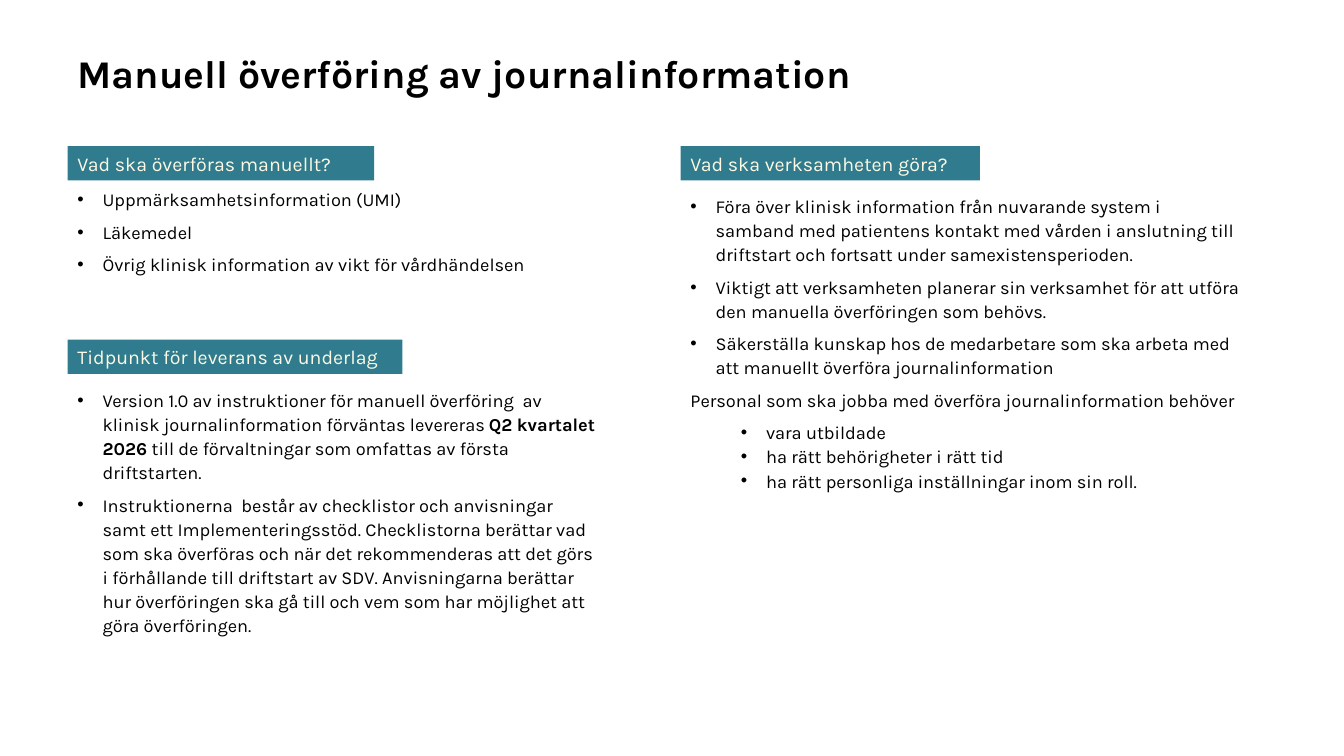
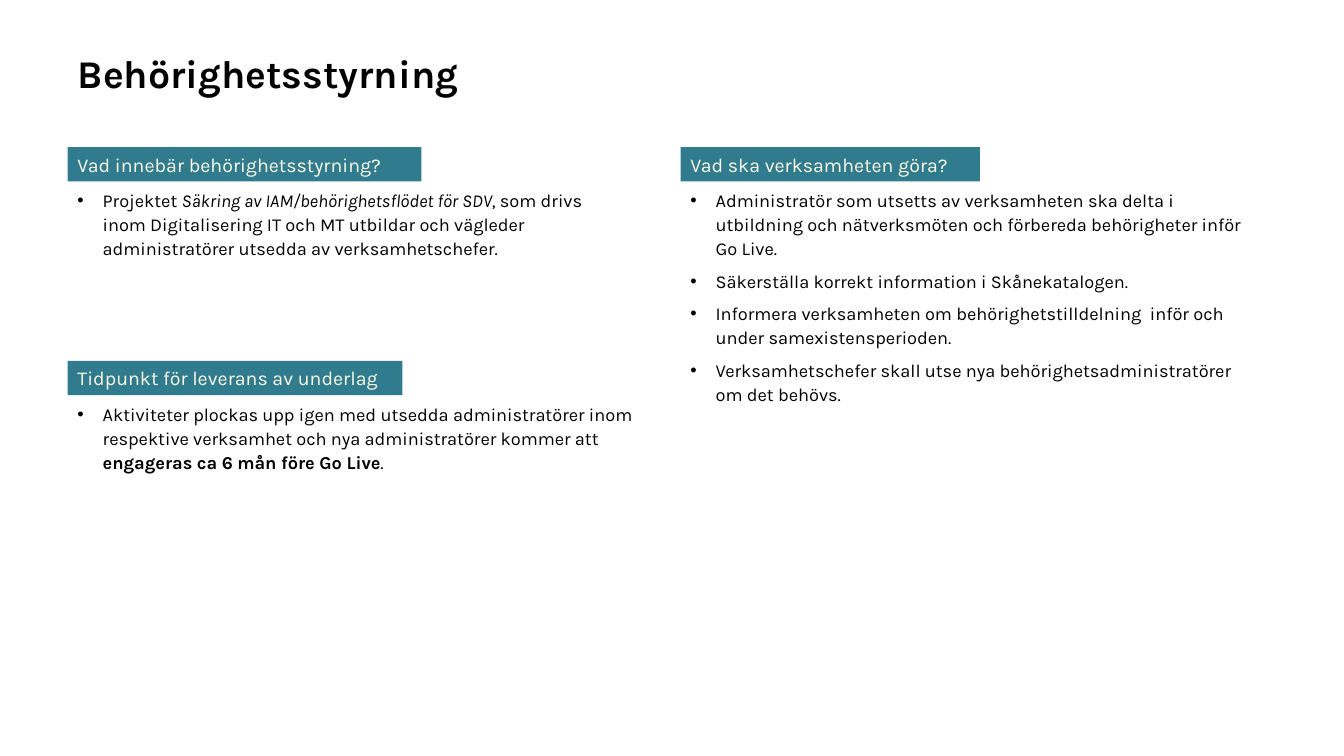
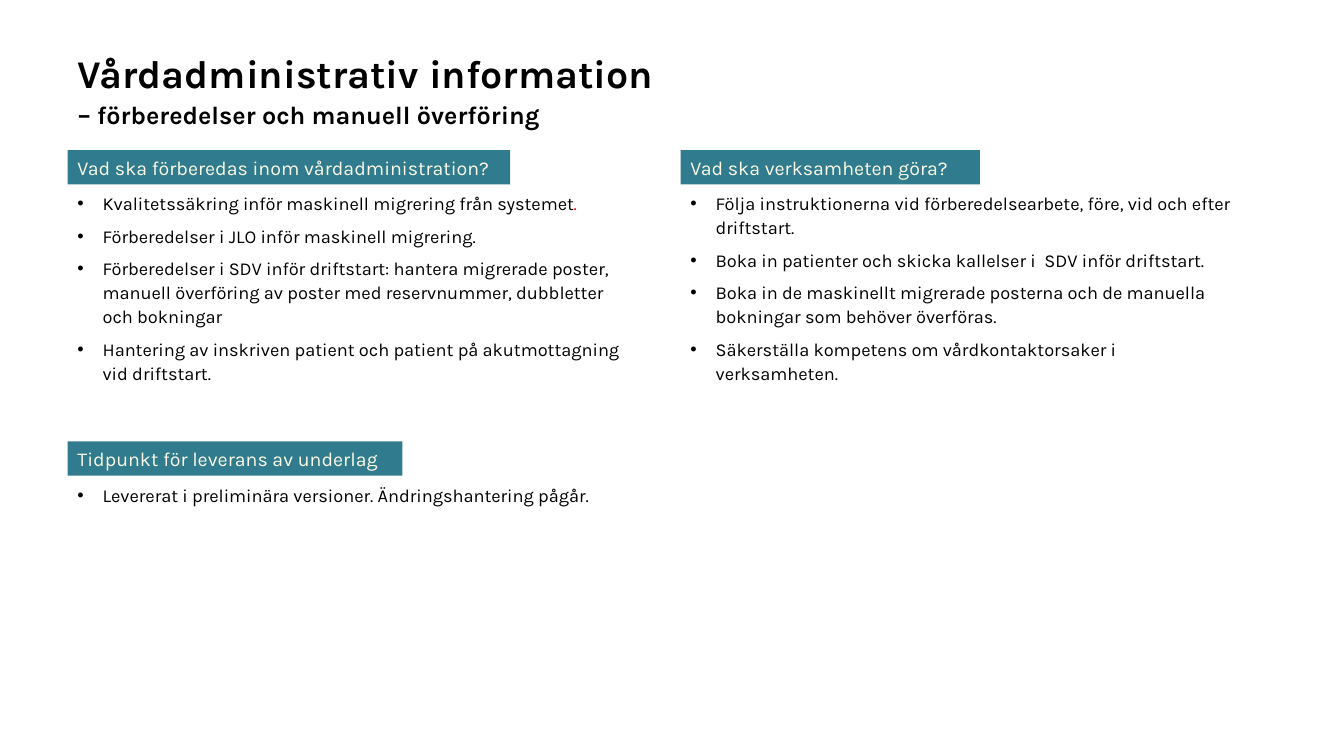
from collections import namedtuple

from lxml import etree
from pptx import Presentation
from pptx.dml.color import RGBColor
from pptx.enum.shapes import MSO_SHAPE
from pptx.enum.text import MSO_ANCHOR, MSO_AUTO_SIZE, PP_ALIGN
from pptx.oxml.ns import qn
from pptx.util import Inches, Pt

RECT = MSO_SHAPE.RECTANGLE
TOP, MIDDLE = MSO_ANCHOR.TOP, MSO_ANCHOR.MIDDLE
NO_FIT = MSO_AUTO_SIZE.NONE
LEFT = PP_ALIGN.LEFT

FONT = "Karla"
BLACK, RED, TEAL, CREAM = "000000", "FF0000", "307C8E", "FDF9E4"
TITLE_SIZE, SUBTITLE_SIZE, HEADING_SIZE, BODY_SIZE = 28, 18, 14, 13
LINE_SPACING = 1.1
HANGING = 0.25
LEFT_X, RIGHT_X = 0.67, 6.75
HEADING_H = 0.34
BODY_GAP = 0.35
WIDE_GAP = 0.42

Run = namedtuple("Run", "text bold italic color", defaults=(False, False, BLACK))
Para = namedtuple("Para", "runs indent after", defaults=(HANGING, 6))
Heading = namedtuple("Heading", "text width")

TASKS = Heading("Vad ska verksamheten göra?", 2.97)
DELIVERY = Heading("Tidpunkt för leverans av underlag", 3.32)


def rgb(hex_color):
    return RGBColor.from_string(hex_color)


def add_run(p, text, size, color=BLACK, bold=False, italic=False):
    r = p.add_run()
    r.text = text
    r.font.name = FONT
    r.font.size = Pt(size)
    r.font.bold = bold
    r.font.italic = italic
    r.font.color.rgb = rgb(color)


def add_bullet(p, indent):
    pPr = p._p.get_or_add_pPr()
    pPr.set("marL", str(Inches(indent)))
    pPr.set("indent", str(-Inches(HANGING)))
    bu_color = etree.SubElement(pPr, qn("a:buClr"))
    etree.SubElement(bu_color, qn("a:srgbClr"), val=BLACK)
    etree.SubElement(pPr, qn("a:buFont"), typeface="Arial")
    etree.SubElement(pPr, qn("a:buChar"), char="•")


def add_title(s, title, subtitle):
    sp = s.shapes.title
    sp.left, sp.top, sp.width, sp.height = map(Inches, (LEFT_X, 0.39, 12, 0.8))
    tf = sp.text_frame
    tf.auto_size = NO_FIT
    tf.vertical_anchor = TOP
    p = tf.paragraphs[0]
    p.alignment = LEFT
    p.line_spacing = LINE_SPACING
    p.space_before = Pt(0)
    add_run(p, title, TITLE_SIZE, bold=True)
    if subtitle:
        p.add_line_break()
        add_run(p, subtitle, SUBTITLE_SIZE, bold=True)


def add_heading(s, x, y, heading):
    sp = s.shapes.add_shape(RECT, Inches(x), Inches(y),
                            Inches(heading.width), Inches(HEADING_H))
    sp.shadow.inherit = False
    sp.fill.solid()
    sp.fill.fore_color.rgb = rgb(TEAL)
    sp.line.fill.background()
    tf = sp.text_frame
    tf.word_wrap = True
    tf.vertical_anchor = MIDDLE
    p = tf.paragraphs[0]
    p.alignment = LEFT
    add_run(p, heading.text, HEADING_SIZE, CREAM)


def add_body(s, x, y, width, height, paras):
    sp = s.shapes.add_textbox(Inches(x), Inches(y), Inches(width), Inches(height))
    tf = sp.text_frame
    tf.word_wrap = True
    for i, item in enumerate(paras):
        para = item if isinstance(item, Para) else Para([Run(item)])
        p = tf.add_paragraph() if i else tf.paragraphs[0]
        if para.indent:
            add_bullet(p, para.indent)
        p.line_spacing = LINE_SPACING
        p.space_after = Pt(para.after)
        for run in para.runs:
            add_run(p, run.text, BODY_SIZE, run.color, run.bold, run.italic)


def add_section(s, x, y, heading, width, height, paras, gap=BODY_GAP):
    """Coloured heading with its bulleted text a fixed gap below its top."""
    add_heading(s, x, y, heading)
    add_body(s, x, y + gap, width, height, paras)


def add_slide(prs, title, subtitle=None):
    s = prs.slides.add_slide(prs.slide_layouts[5])
    add_title(s, title, subtitle)
    return s


def journal_slide(prs):
    s = add_slide(prs, "Manuell överföring av journalinformation")
    top = 1.45
    add_section(s, LEFT_X, top, Heading("Vad ska överföras manuellt?", 3.04), 5.43, 1.34, [
        "Uppmärksamhetsinformation (UMI)",
        "Läkemedel",
        "Övrig klinisk information av vikt för vårdhändelsen",
    ])
    add_section(s, RIGHT_X, top, TASKS, 5.67, 5.28, [
        "Föra över klinisk information från nuvarande system i samband med patientens "
        "kontakt med vården i anslutning till driftstart och fortsatt under "
        "samexistensperioden.",
        "Viktigt att verksamheten planerar sin verksamhet för att utföra den manuella "
        "överföringen som behövs.",
        "Säkerställa kunskap hos de medarbetare som ska arbeta "
        "med att manuellt överföra journalinformation",
        Para([Run("Personal som ska jobba med överföra journalinformation behöver")],
             indent=0),
        Para([Run("vara utbildade")], indent=0.75, after=0),
        Para([Run("ha rätt behörigheter i rätt tid")], indent=0.75, after=0),
        Para([Run("ha rätt personliga inställningar inom sin roll.")], indent=0.75),
    ], gap=WIDE_GAP)
    add_section(s, LEFT_X, 3.37, DELIVERY, 5.37, 2.99, [
        Para([
            Run("Version 1.0 av instruktioner för manuell överföring  av klinisk "
                "journalinformation förväntas levereras "),
            Run("Q2 kvartalet 2026 ", bold=True),
            Run("till de förvaltningar som omfattas av första driftstarten."),
        ]),
        "Instruktionerna  består av checklistor och anvisningar samt ett "
        "Implementeringsstöd. Checklistorna berättar vad som ska överföras och när det "
        "rekommenderas att det görs i förhållande till driftstart av SDV. Anvisningarna "
        "berättar hur överföringen ska gå till och vem som har möjlighet att göra "
        "överföringen.",
    ], gap=WIDE_GAP)


def access_slide(prs):
    s = add_slide(prs, "Behörighetsstyrning")
    top = 1.46
    add_section(s, LEFT_X, top, Heading("Vad innebär behörighetsstyrning?", 3.51), 5.53, 1.34, [
        Para([
            Run("Projektet "),
            Run("Säkring av IAM/behörighetsflödet för SDV", italic=True),
            Run(", som drivs inom Digitalisering IT och MT utbildar och vägleder "
                "administratörer utsedda av verksamhetschefer."),
        ]),
    ])
    add_section(s, RIGHT_X, top, TASKS, 5.67, 2.5, [
        "Administratör som utsetts av verksamheten ska delta i utbildning och "
        "nätverksmöten och förbereda behörigheter inför Go Live.",
        "Säkerställa korrekt information i Skånekatalogen.",
        "Informera verksamheten om behörighetstilldelning  inför och under "
        "samexistensperioden.",
        "Verksamhetschefer skall utse nya behörighetsadministratörer om det behövs.",
    ])
    add_section(s, LEFT_X, 3.58, DELIVERY, 5.92, 0.73, [
        Para([
            Run("Aktiviteter plockas upp igen med utsedda administratörer inom respektive "
                "verksamhet och nya administratörer kommer att "),
            Run("engageras ca 6 mån före Go Live", bold=True),
            Run("."),
        ]),
    ])


def care_admin_slide(prs):
    s = add_slide(prs, "Vårdadministrativ information",
                  "– förberedelser och manuell överföring")
    top = 1.49
    preparation = Heading("Vad ska förberedas inom vårdadministration?", 4.39)
    add_section(s, LEFT_X, top, preparation, 5.57, 2.69, [
        Para([
            Run("Kvalitetssäkring inför maskinell migrering från systemet"),
            Run(".", color=RED),
        ]),
        "Förberedelser i JLO inför maskinell migrering.",
        "Förberedelser i SDV inför driftstart: hantera migrerade poster, manuell "
        "överföring av poster med reservnummer, dubbletter och bokningar",
        "Hantering av inskriven patient och patient på akutmottagning vid driftstart.",
    ])
    add_section(s, RIGHT_X, top, TASKS, 5.67, 5.28, [
        "Följa instruktionerna vid förberedelsearbete, före, vid och efter driftstart.",
        "Boka in patienter och skicka kallelser i  SDV inför driftstart.",
        "Boka in de maskinellt migrerade posterna och de manuella bokningar som behöver "
        "överföras.",
        "Säkerställa kompetens om vårdkontaktorsaker i verksamheten.",
    ])
    add_section(s, LEFT_X, 4.38, DELIVERY, 5.67, 0.73, [
        "Levererat i preliminära versioner. Ändringshantering pågår.",
    ])


def main():
    prs = Presentation()
    prs.slide_width, prs.slide_height = Inches(13.33), Inches(7.5)
    journal_slide(prs)
    access_slide(prs)
    care_admin_slide(prs)
    prs.save("out.pptx")


if __name__ == "__main__":
    main()
